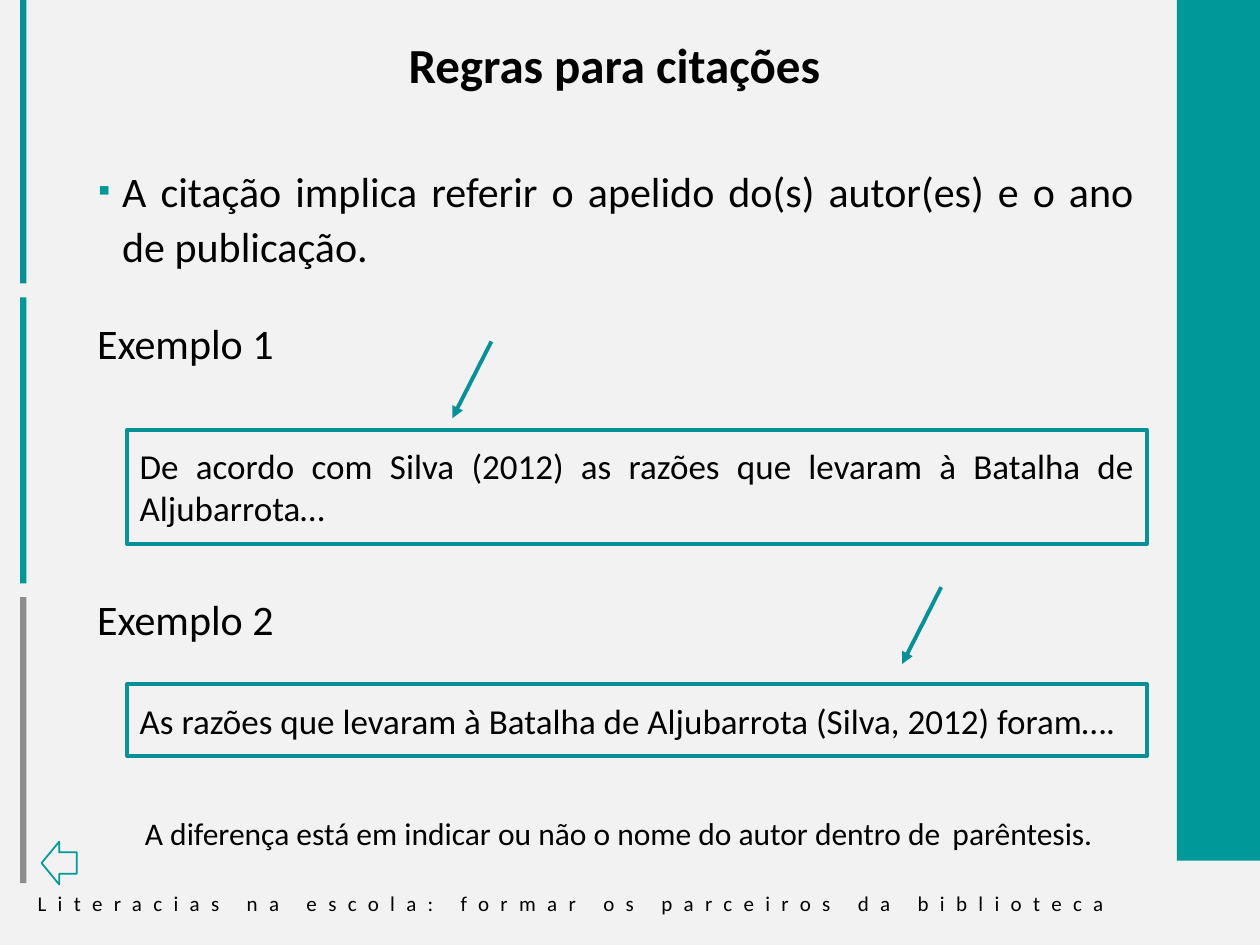
from lxml.etree import SubElement
from pptx import Presentation
from pptx.dml.color import RGBColor
from pptx.enum.shapes import MSO_CONNECTOR, MSO_SHAPE as SHAPE
from pptx.enum.text import MSO_ANCHOR, MSO_AUTO_SIZE, PP_ALIGN as ALIGN
from pptx.oxml.ns import qn
from pptx.util import Inches, Pt

FONT = "Calibri"
BLACK, TEAL, DARK_TEAL, GREY, PALE = "000000", "009999", "089099", "8E8E8E", "F2F2F2"

TITLE = "Regras para citações"
RULE = "A citação implica referir o apelido do(s) autor(es) e o ano de publicação."
EXAMPLE_HEADINGS = [("Exemplo 1", 18), ("Exemplo 2", 108)]
QUOTES = [
    ("De acordo com Silva (2012) as razões que levaram à Batalha de Aljubarrota…",
     3.41, 0.91, ALIGN.JUSTIFY),
    ("As razões que levaram à Batalha de Aljubarrota (Silva, 2012) foram….",
     5.43, 0.57, ALIGN.LEFT),
]
POINTERS = [(3.9, 2.71), (7.47, 4.66)]
POINTER_RUN = (-0.31, 0.61)
DIFFERENCE = [
    ("A diferença está em indicar ou não o nome do autor dentro de", 18),
    ("\u00a0", 10.5),
    (" parêntesis.", 18),
]
FOOTER = "Literacias na escola: formar os parceiros da biblioteca"
SIDE_BARS = [DARK_TEAL, TEAL, GREY]
BAR_TOP, BAR_HEIGHT, BAR_PITCH = -0.02, 2.27, 2.38


def color(value):
    return RGBColor.from_string(value)


def place(shape, left, top, width, height):
    shape.left, shape.top = Inches(left), Inches(top)
    shape.width, shape.height = Inches(width), Inches(height)


def prepare(shape):
    frame = shape.text_frame
    frame.word_wrap = True
    frame.auto_size = MSO_AUTO_SIZE.NONE
    frame.vertical_anchor = MSO_ANCHOR.TOP
    return frame


def add_run(paragraph, text, size, bold=False):
    run = paragraph.add_run()
    run.text = text
    font = run.font
    font.name, font.size, font.bold = FONT, Pt(size), bold
    font.color.rgb = color(BLACK)
    return run


def space(paragraph, align, line, before=0, after=0):
    paragraph.alignment = align
    paragraph.line_spacing = line
    paragraph.space_before, paragraph.space_after = Pt(before), Pt(after)


def indent(paragraph, margin, first):
    properties = paragraph._p.get_or_add_pPr()
    properties.set("marL", str(Inches(margin)))
    properties.set("indent", str(Inches(first)))
    return properties


def add_bullet(properties):
    bullet_color = SubElement(properties, qn("a:buClr"))
    SubElement(bullet_color, qn("a:srgbClr")).set("val", TEAL)
    SubElement(properties, qn("a:buSzPct")).set("val", "80000")
    SubElement(properties, qn("a:buFont")).set("typeface", FONT)
    SubElement(properties, qn("a:buChar")).set("char", "▪")


def add_shape(slide, kind, box, fill=None, line=None, weight=1):
    shape = slide.shapes.add_shape(kind, *map(Inches, box))
    shape.shadow.inherit = False
    if fill:
        shape.fill.solid()
        shape.fill.fore_color.rgb = color(fill)
    else:
        shape.fill.background()
    if line:
        shape.line.color.rgb = color(line)
        shape.line.width = Pt(weight)
    else:
        shape.line.fill.background()
    return shape


def add_pointer(slide, x, y):
    dx, dy = POINTER_RUN
    pointer = slide.shapes.add_connector(
        MSO_CONNECTOR.STRAIGHT, *map(Inches, (x, y, x + dx, y + dy)))
    pointer.line.color.rgb = color(DARK_TEAL)
    pointer.line.width = Pt(2.25)
    SubElement(pointer.line._get_or_add_ln(), qn("a:tailEnd")).set("type", "triangle")
    SubElement(pointer._element.spPr, qn("a:effectLst"))


def add_text_box(slide, *box):
    return prepare(slide.shapes.add_textbox(*map(Inches, box))).paragraphs[0]


def fill_body(body):
    place(body, 0.48, 1.22, 8.62, 5.61)
    frame = prepare(body)
    rule = frame.paragraphs[0]
    space(rule, ALIGN.JUSTIFY, 1.1, after=6)
    add_bullet(indent(rule, 0.39, -0.19))
    add_run(rule, RULE, 24)
    for heading, before in EXAMPLE_HEADINGS:
        example = frame.add_paragraph()
        space(example, ALIGN.JUSTIFY, 1.1, before, 18)
        SubElement(indent(example, 0.19, 0), qn("a:buNone"))
        add_run(example, heading, 24)


def main():
    deck = Presentation()
    deck.slide_width, deck.slide_height = Inches(10), Inches(7.5)
    slide = deck.slides.add_slide(deck.slide_layouts[1])
    slide.background.fill.solid()
    slide.background.fill.fore_color.rgb = color(PALE)

    fill_body(slide.placeholders[1])
    title = slide.shapes.title
    place(title, 0.48, -0.01, 8.79, 0.73)
    heading = prepare(title).paragraphs[0]
    space(heading, ALIGN.CENTER, 1.5)
    add_run(heading, TITLE, 28, bold=True)

    add_shape(slide, SHAPE.RECTANGLE, (9.34, -0.01, 0.66, 6.84), fill=TEAL)
    footer = add_text_box(slide, 0.2, 7.02, 9.19, 0.3)
    add_run(footer, FOOTER, 12)._r.get_or_add_rPr().set("spc", "650")
    for index, bar_color in enumerate(SIDE_BARS):
        bar = (0.16, BAR_TOP + index * BAR_PITCH, 0.05, BAR_HEIGHT)
        add_shape(slide, SHAPE.RECTANGLE, bar, fill=bar_color)

    for quote, top, height, align in QUOTES:
        box = add_shape(slide, SHAPE.RECTANGLE, (1.01, top, 8.09, height),
                        line=DARK_TEAL, weight=2.25)
        frame = prepare(box)
        frame.margin_top = Inches(0.12)
        frame.paragraphs[0].alignment = align
        add_run(frame.paragraphs[0], quote, 20)
    for start in POINTERS:
        add_pointer(slide, *start)

    difference = add_text_box(slide, 0.54, 6.36, 8.47, 0.44)
    space(difference, ALIGN.CENTER, 1.18, after=6)
    indent(difference, 0, 0.27)
    for text, size in DIFFERENCE:
        add_run(difference, text, size)
    add_shape(slide, SHAPE.LEFT_ARROW, (0.33, 6.68, 0.28, 0.34), line=TEAL)

    deck.save("out.pptx")


if __name__ == "__main__":
    main()
